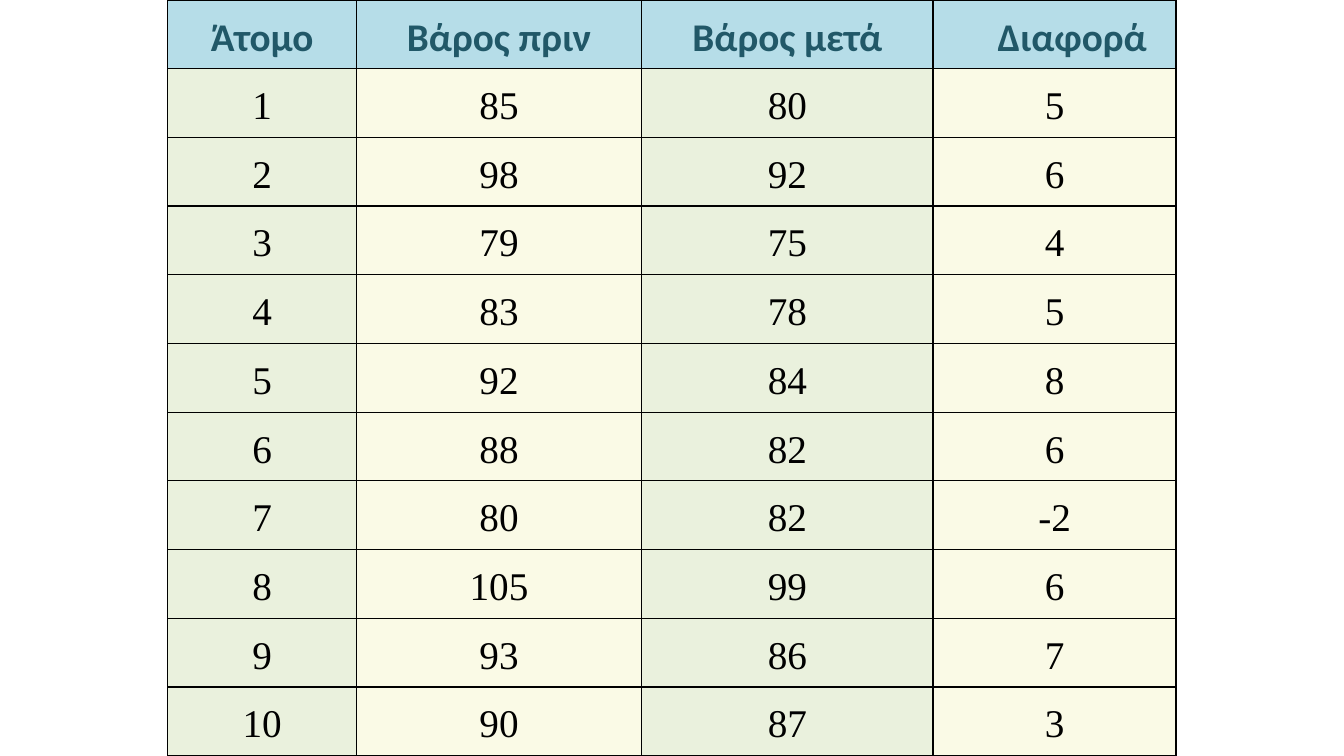
from lxml import etree
from pptx import Presentation, util as u
from pptx.dml.color import RGBColor
from pptx.enum import text
from pptx.oxml.ns import qn

HEAD = ["Άτομο", "Βάρος πριν", "Βάρος μετά", "Διαφορά"]
BEFORE = [85, 98, 79, 83, 92, 88, 80, 105, 93, 90]
AFTER = [80, 92, 75, 78, 84, 82, 82, 99, 86, 87]
ROWS = [HEAD] + [(n, b, a, b - a)
                 for n, (b, a) in enumerate(zip(BEFORE, AFTER), 1)]

WIDE, HIGH = 13.33, 7.5
COLS = [1.87, 2.83, 2.89, 2.41]
INSET, INDENT = 0.07, 0.35
BANDS = ["EAF1DD", "FAFAE6"]
HEAD_FILL, HEAD_INK = "B6DDE8", "215868"
INK = "000000"


def color(code):
    return RGBColor.from_string(code)


def border(cell):
    """Draw a thin line on all four sides; call before the fill is set."""
    props = cell._tc.get_or_add_tcPr()
    for side in ("a:lnL", "a:lnR", "a:lnT", "a:lnB"):
        line = etree.SubElement(props, qn(side), w=str(u.Pt(1)))
        fill = etree.SubElement(line, qn("a:solidFill"))
        etree.SubElement(fill, qn("a:srgbClr"), val=INK)


def write(cell, value, fill, font, ink, bold, indent=0):
    border(cell)
    cell.fill.solid()
    cell.fill.fore_color.rgb = color(fill)
    cell.vertical_anchor = text.MSO_ANCHOR.MIDDLE
    cell.margin_left = u.Inches(INSET + indent)
    cell.margin_right = u.Inches(INSET)
    cell.margin_top = cell.margin_bottom = 0
    para = cell.text_frame.paragraphs[0]
    para.alignment = text.PP_ALIGN.CENTER
    para.line_spacing = 1.15
    para.space_before = para.space_after = u.Pt(3)
    run = para.add_run()
    run.text = str(value)
    run.font.size = u.Pt(28)
    run.font.name = font
    run.font.bold = bold
    run.font.color.rgb = color(ink)


def main():
    deck = Presentation()
    deck.slide_width, deck.slide_height = u.Inches(WIDE), u.Inches(HIGH)
    slide = deck.slides.add_slide(deck.slide_layouts[6])
    span = sum(COLS)
    table = slide.shapes.add_table(
        len(ROWS), len(COLS), u.Inches((WIDE - span) / 2), 0,
        u.Inches(span), u.Inches(HIGH)).table
    for col, width in zip(table.columns, COLS):
        col.width = u.Inches(width)
    for row in table.rows:
        row.height = u.Inches(HIGH / len(ROWS))
    for r, row in enumerate(ROWS):
        for c, value in enumerate(row):
            cell = table.cell(r, c)
            if r == 0:
                indent = INDENT if c == len(COLS) - 1 else 0
                write(cell, value, HEAD_FILL, "Calibri", HEAD_INK, True, indent)
            else:
                write(cell, value, BANDS[c % 2], "Times New Roman", INK, False)
    deck.save("out.pptx")


if __name__ == "__main__":
    main()
